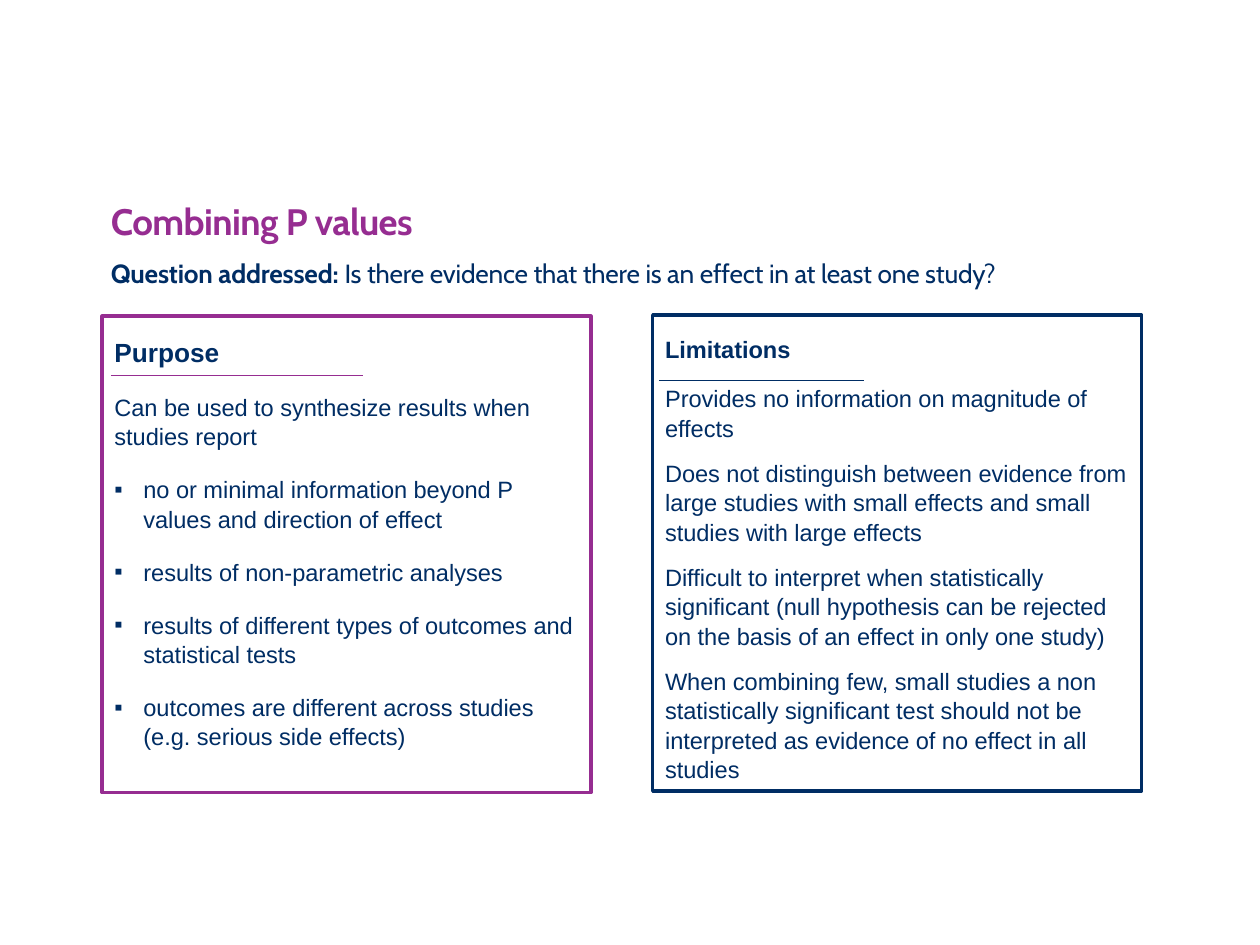
"""Build the slide on combining P values."""
from dataclasses import dataclass

from lxml.etree import SubElement
from pptx import Presentation
from pptx.dml.color import RGBColor
from pptx.enum.shapes import MSO_CONNECTOR, MSO_SHAPE
from pptx.enum.text import MSO_ANCHOR, PP_ALIGN
from pptx.oxml.ns import qn
from pptx.slide import Slide
from pptx.text.text import _Paragraph
from pptx.util import Inches, Pt

PURPLE = RGBColor(0x96, 0x2D, 0x91)
NAVY = RGBColor(0x00, 0x2D, 0x64)
PANEL_W, PANEL_H = 3.88, 3.78
BODY_SIZE = 13.5
HEADING_GAP = 6.75


@dataclass
class Panel:
    left: float
    top: float
    color: RGBColor
    heading: str
    heading_size: float
    gap: float
    rule: tuple[float, float, float]
    texts: list[str]
    bullets: list[str]


PANELS = [
    Panel(0.81, 2.51, PURPLE, "Purpose", 15, 6.75, (0.88, 2.88, 2.98),
          ["Can be used to synthesize results when studies report"],
          ["no or minimal information beyond P values and direction of effect",
           "results of non-parametric analyses",
           "results of different types of outcomes and statistical tests",
           "outcomes are different across studies (e.g. serious side effects)"]),
    Panel(5.18, 2.5, NAVY, "Limitations", 13.5, 4.5, (5.23, 6.86, 3.02),
          ["Provides no information on magnitude of effects",
           "Does not distinguish between evidence from large studies with small "
           "effects and small studies with large effects",
           "Difficult to interpret when statistically significant (null hypothesis "
           "can be rejected on the basis of an effect in only one study)",
           "When combining few, small studies a non statistically significant test "
           "should not be interpreted as evidence of no effect in all studies"],
          []),
]


def add_run(p: _Paragraph, text: str, font: str, size: float, color: RGBColor,
            bold: bool = False, spacing: float = 0) -> None:
    r = p.add_run()
    r.text = text
    r.font.name = font
    r.font.size = Pt(size)
    r.font.bold = bold
    r.font.color.rgb = color
    if spacing:
        r._r.get_or_add_rPr().set("spc", str(round(spacing * 100)))


def add_text_line(s: Slide, left: float, top: float, width: float, height: float,
                  anchor: MSO_ANCHOR) -> _Paragraph:
    tf = s.shapes.add_textbox(Inches(left), Inches(top), Inches(width), Inches(height)).text_frame
    tf.word_wrap = True
    tf.vertical_anchor = anchor
    tf.margin_left = tf.margin_right = tf.margin_top = tf.margin_bottom = 0
    return tf.paragraphs[0]


def add_bullet(p: _Paragraph) -> None:
    pPr = p._p.get_or_add_pPr()
    pPr.set("marL", str(Inches(0.23)))
    pPr.set("indent", str(-Inches(0.23)))
    SubElement(pPr, qn("a:buFont")).set("typeface", "Arial")
    SubElement(pPr, qn("a:buChar")).set("char", "▪")


def add_panel(s: Slide, panel: Panel) -> None:
    group = s.shapes.add_group_shape()
    sp = group.shapes.add_shape(MSO_SHAPE.RECTANGLE, Inches(panel.left), Inches(panel.top),
                                Inches(PANEL_W), Inches(PANEL_H))
    sp.shadow.inherit = False
    sp.fill.background()
    sp.line.color.rgb = panel.color
    sp.line.width = Pt(2)
    tf = sp.text_frame
    tf.word_wrap = True
    tf.vertical_anchor = MSO_ANCHOR.TOP
    tf.margin_left = tf.margin_right = Inches(0.1)
    tf.margin_top, tf.margin_bottom = Inches(0.15), Inches(0.05)

    p = tf.paragraphs[0]
    p.alignment = PP_ALIGN.LEFT
    p.line_spacing = 1.04
    p.space_after = Pt(HEADING_GAP)
    add_run(p, panel.heading, "Arial", panel.heading_size, NAVY, bold=True)
    for i, text in enumerate(panel.texts + panel.bullets):
        p = tf.add_paragraph()
        p.alignment = PP_ALIGN.LEFT
        p.line_spacing = 1.04
        p.space_before = p.space_after = Pt(panel.gap)
        if i >= len(panel.texts):
            add_bullet(p)
        add_run(p, text, "Arial", BODY_SIZE, NAVY)

    start, end, y = panel.rule
    rule = group.shapes.add_connector(MSO_CONNECTOR.STRAIGHT, Inches(start), Inches(y),
                                      Inches(end), Inches(y))
    rule.line.color.rgb = panel.color
    rule.line.width = Pt(0.75)
    SubElement(rule._element.spPr, qn("a:effectLst"))


def main() -> None:
    prs = Presentation()
    prs.slide_width, prs.slide_height = Inches(10), Inches(7.5)
    s = prs.slides.add_slide(prs.slide_layouts[6])
    title = add_text_line(s, 0.88, 1.41, 6.69, 0.52, MSO_ANCHOR.BOTTOM)
    add_run(title, "Combining P values", "Cabin", 21, PURPLE, bold=True, spacing=-0.3)
    question = add_text_line(s, 0.88, 2.04, 9.08, 0.35, MSO_ANCHOR.TOP)
    add_run(question, "Question addressed: ", "Cabin", 15, NAVY, bold=True, spacing=-0.1)
    add_run(question, "Is there evidence that there is an effect in at least one study?",
            "Cabin", 15, NAVY, spacing=-0.1)
    for panel in PANELS:
        add_panel(s, panel)
    prs.save("out.pptx")


if __name__ == "__main__":
    main()
